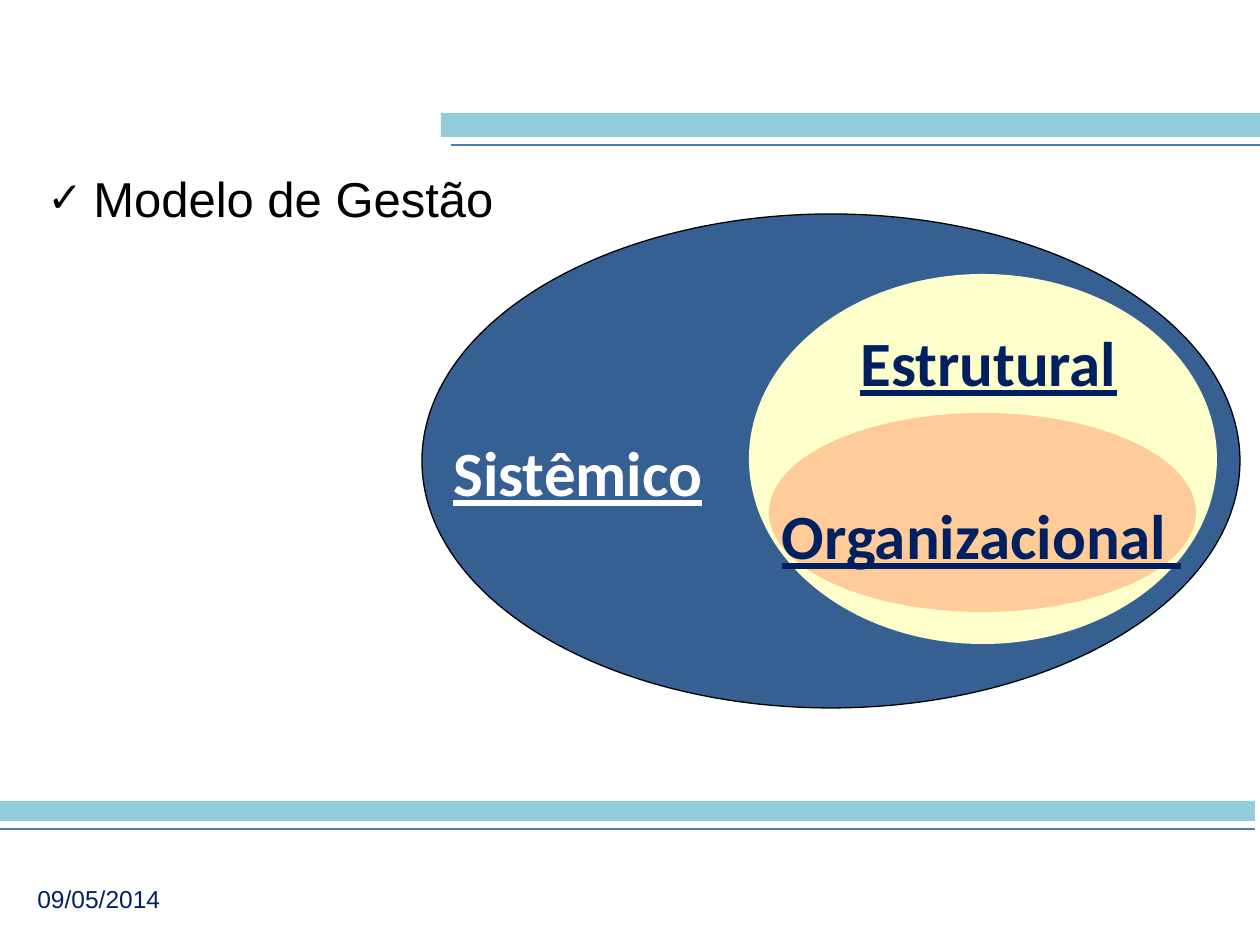
from pptx import Presentation
from pptx.dml.color import RGBColor as RGB
from pptx.enum.shapes import MSO_CONNECTOR as Conn, MSO_SHAPE as Shape
from pptx.enum.text import MSO_ANCHOR as Anchor, PP_ALIGN as Align
from pptx.oxml.ns import qn
from pptx.util import Pt
from lxml.etree import SubElement as Sub

PX = 914400 // 126
THEME = {
    "band": "93CDDD", "rule": "4B7EBC", "navy": "002060", "white": "FFFFFF",
    "black": "000000", "blue": "376092", "cream": "FFFFCC", "peach": "FFCC99",
    "date": 14, "head": 28, "label": 36, "thin": 0.75,
}

deck = Presentation()
deck.slide_width, deck.slide_height = 1260 * PX, 945 * PX
slide = deck.slides.add_slide(deck.slide_layouts[6])


def draw(kind, box, fill, line=None):
    shape = slide.shapes.add_shape(kind, *(n * PX for n in box))
    shape.shadow.inherit = False
    shape.fill.solid()
    shape.fill.fore_color.rgb = RGB.from_string(THEME[fill])
    if line:
        shape.line.color.rgb = RGB.from_string(THEME[line])
        shape.line.width = Pt(THEME["thin"])
    else:
        shape.line.fill.background()


def write(text, box, color, form, align=Align.LEFT, mark=None):
    frame = slide.shapes.add_textbox(*(n * PX for n in box)).text_frame
    frame.word_wrap = True
    frame.vertical_anchor = Anchor.MIDDLE
    para = frame.paragraphs[0]
    para.alignment = align
    if mark:
        props = para._p.get_or_add_pPr()
        props.set("marL", str(46 * PX))
        props.set("indent", str(-46 * PX))
        Sub(props, qn("a:buSzPct"), val="86000")
        Sub(props, qn("a:buFont"), typeface="Arial")
        Sub(props, qn("a:buChar"), char=mark)
    run = para.add_run()
    run.text = text
    for key, val in form.items():
        setattr(run.font, key, val)
    run.font.color.rgb = RGB.from_string(THEME[color])


# Bands, each with a thin rule below
for band, rule in [
    ((441, 113, 819, 24), (451, 1260, 145)),
    ((0, 801, 1255, 20), (0, 1255, 829)),
]:
    draw(Shape.RECTANGLE, band, "band")
    left, right, y = (n * PX for n in rule)
    line = slide.shapes.add_connector(Conn.STRAIGHT, left, y, right, y)
    line.line.color.rgb = RGB.from_string(THEME["rule"])
    line.line.width = Pt(THEME["thin"])
    Sub(line._element.spPr, qn("a:effectLst"))

# Date and heading
plain = {"name": "Arial"}
write("09/05/2014", (25, 877, 566, 43), "navy",
      {**plain, "size": Pt(THEME["date"])})
write("Modelo de Gestão", (35, 170, 630, 55), "black",
      {**plain, "size": Pt(THEME["head"])}, mark="✓")

# Nested ellipses with their labels
bold = {"name": "Calibri", "size": Pt(THEME["label"]),
        "bold": True, "underline": True}
for oval, fill, edge, text, box, color, align in [
    ((422, 214, 818, 494), "blue", "black",
     "Sistêmico", (441, 389, 305, 165), "white", Align.LEFT),
    ((749, 274, 468, 370), "cream", None,
     "Estrutural", (848, 284, 305, 155), "navy", Align.LEFT),
    ((769, 413, 427, 199), "peach", None,
     "Organizacional ", (740, 447, 483, 175), "navy", Align.CENTER),
]:
    draw(Shape.OVAL, oval, fill, edge)
    write(text, box, color, bold, align)

deck.save("out.pptx")
